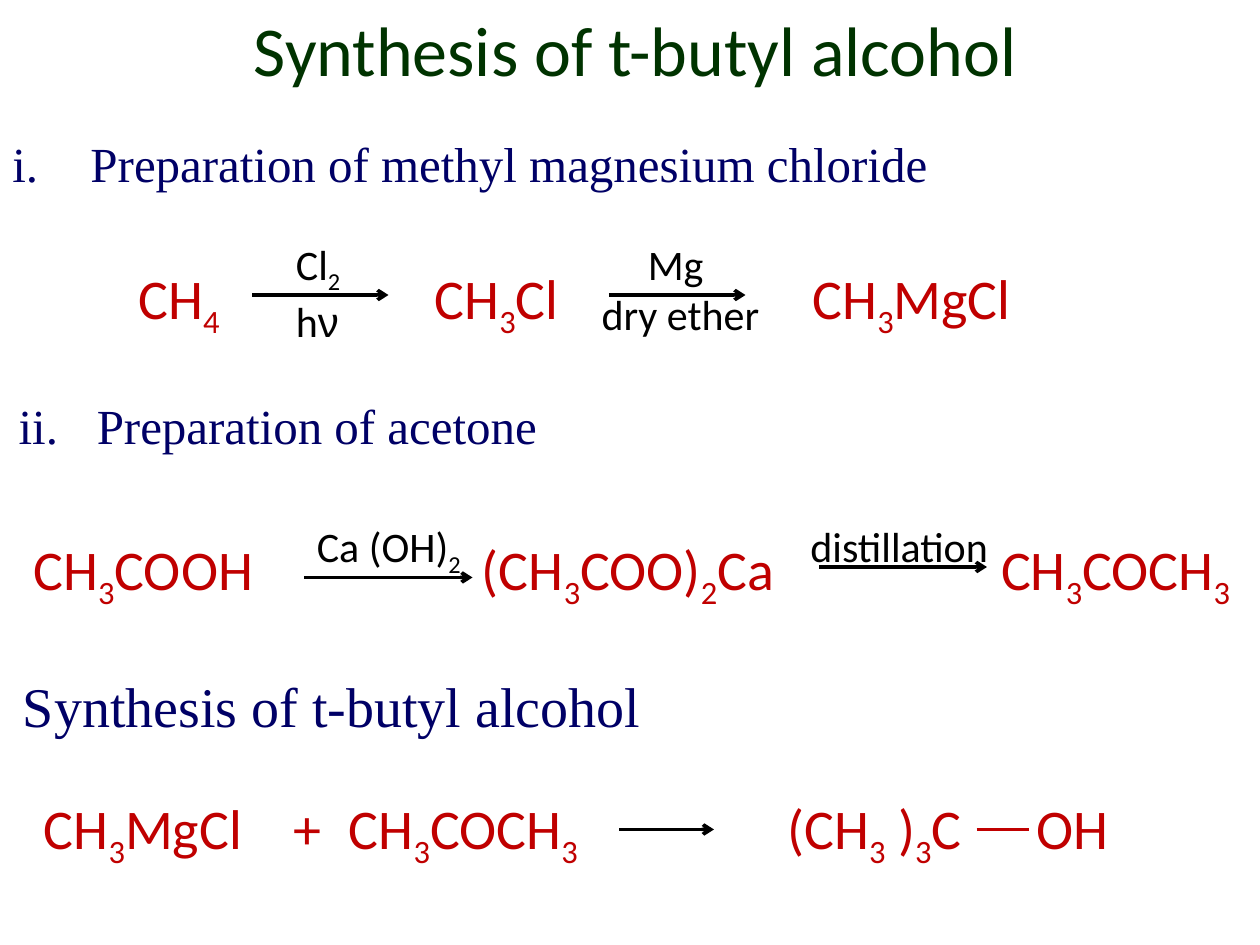
"""Builds a slide on the synthesis of t-butyl alcohol."""
from lxml import etree
from pptx import Presentation
from pptx import util as u
from pptx.dml.color import RGBColor
from pptx.enum import shapes, text
from pptx.oxml import ns

COLORS = {"title": "003300", "heading": "000066", "formula": "C00000", "reagent": "000000"}
SIZES = {"title": 40, "heading": 28, "formula": 32, "reagent": 24}
FONTS = {"title": "Calibri", "heading": "Times New Roman", "formula": "Calibri", "reagent": "Calibri"}
COLUMNS, ROWS = 120, 90


class ReactionSlide:
    """Holds the style, the slide and the group being filled."""

    def __init__(self, presentation):
        self.column = presentation.slide_width / COLUMNS
        self.row = presentation.slide_height / ROWS
        self.slide = presentation.slides.add_slide(presentation.slide_layouts[5])
        self.canvas = self.slide.shapes

    def start_group(self):
        """Sends the next elements to a new group."""
        self.canvas = self.slide.shapes.add_group_shape().shapes

    def end_group(self):
        """Sends the next elements to the slide itself."""
        self.canvas = self.slide.shapes

    def place(self, left, top, width, height):
        """Turns grid units into lengths."""
        return (round(left * self.column), round(top * self.row),
                round(width * self.column), round(height * self.row))

    def run(self, paragraph, words, style, size=None, font=None, subscript=False):
        """Adds one styled run."""
        run = paragraph.add_run()
        run.text = words
        run.font.size = u.Pt(size or SIZES[style])
        run.font.name = font or FONTS[style]
        run.font.color.rgb = RGBColor.from_string(COLORS[style])
        if subscript:
            run.font._element.set("baseline", "-25000")

    def chemistry(self, paragraph, words, style, size=None):
        """Adds runs, lowering each digit that follows an underscore."""
        first, *others = words.split("_")
        if first:
            self.run(paragraph, first, style, size)
        for part in others:
            self.run(paragraph, part[0], style, size, subscript=True)
            if part[1:]:
                self.run(paragraph, part[1:], style, size)

    def title(self, area, words):
        """Formats the title placeholder."""
        shape = self.slide.shapes.title
        shape.left, shape.top, shape.width, shape.height = self.place(*area)
        frame = shape.text_frame
        frame.word_wrap = True
        frame.auto_size = text.MSO_AUTO_SIZE.SHAPE_TO_FIT_TEXT
        frame.vertical_anchor = text.MSO_ANCHOR.TOP
        paragraph = frame.paragraphs[0]
        paragraph.alignment = text.PP_ALIGN.CENTER
        self.run(paragraph, words, "title")

    def text(self, area, lines, style, size=None, wrap=False, align=None):
        """Adds a text box and returns its last paragraph."""
        frame = self.canvas.add_textbox(*self.place(*area)).text_frame
        frame.word_wrap = wrap
        frame.auto_size = text.MSO_AUTO_SIZE.SHAPE_TO_FIT_TEXT
        for index, line in enumerate(lines):
            paragraph = frame.add_paragraph() if index else frame.paragraphs[0]
            paragraph.alignment = align
            self.chemistry(paragraph, line, style, size)
        return paragraph

    def step(self, area, words, number):
        """Adds a heading numbered in small roman numerals."""
        properties = self.text(area, [words], "heading")._p.get_or_add_pPr()
        properties.set("marL", str(u.Inches(0.62)))
        properties.set("indent", str(-u.Inches(0.62)))
        bullet = etree.SubElement(properties, ns.qn("a:buAutoNum"), type="romanLcPeriod")
        if number > 1:
            bullet.set("startAt", str(number))

    def equation(self, area, words, stops):
        """Adds a reaction line whose parts start at tab stops in inches."""
        paragraph = self.text(area, [words], "formula", wrap=True)
        tabs = etree.SubElement(paragraph._p.get_or_add_pPr(), ns.qn("a:tabLst"))
        for stop in stops:
            etree.SubElement(tabs, ns.qn("a:tab"), pos=str(u.Inches(stop)), algn="l")

    def line(self, start, end, row, style="reagent", arrow=True):
        """Adds a level line, with an arrowhead unless it is a bond."""
        left, top, width, _ = self.place(start, row, end - start, 0)
        connector = self.canvas.add_connector(
            shapes.MSO_CONNECTOR.STRAIGHT, left, top, left + width, top)
        connector.line.width = u.Pt(2)
        connector.line.color.rgb = RGBColor.from_string(COLORS[style])
        if arrow:
            etree.SubElement(connector.line._get_or_add_ln(), ns.qn("a:tailEnd"), type="arrow")
        etree.SubElement(connector._element.spPr, ns.qn("a:effectLst"))


def main():
    """Builds and saves the slide."""
    presentation = Presentation()
    presentation.slide_width, presentation.slide_height = u.Inches(10), u.Inches(7.5)
    page = ReactionSlide(presentation)
    page.title((1, 0, 119, 9.24), "Synthesis of t-butyl alcohol")
    page.step((0, 12.1, 90.5, 6.84), "Preparation of methyl magnesium chloride", 1)
    page.step((0.6, 37.1, 52.3, 6.84), "Preparation of acetone", 2)
    page.text((1, 63.4, 117, 7.7), ["Synthesis of t-butyl alcohol"], "heading", size=32, wrap=True)

    page.start_group()
    page.equation((12, 24.5, 96, 7.7), "CH_4\tCH_3Cl\tCH_3MgCl", [2.35, 5.35])
    for start in (24, 58):
        page.line(start, start + 13, 28.1)
    light = page.text((27, 22.1, 7.8, 10.9), ["Cl_2", "h"], "reagent")
    page.run(light, "ν", "reagent", font="Arial")
    page.text((56, 22.1, 17.6, 10.9), ["Mg ", "dry ether"], "reagent", align=text.PP_ALIGN.CENTER)

    page.start_group()
    page.equation((2, 50.3, 118, 7.7), "CH_3COOH\t(CH_3COO)_2Ca\tCH_3COCH_3", [3.56, 7.68])
    page.text((29, 49, 17.3, 6), ["Ca (OH)_2"], "reagent")
    page.text((76, 49, 19.6, 6), ["distillation"], "reagent")
    for start, row in ((78, 54), (29, 55)):
        page.line(start, start + 16, row)

    page.start_group()
    page.equation((3, 75, 112, 7.7), "CH_3MgCl\t+\tCH_3COCH_3\t(CH_3 )_3C\tOH",
                  [1.98, 2.42, 5.9, 7.88])
    page.line(59, 68, 79)
    page.line(93, 98, 79, "formula", arrow=False)
    page.end_group()
    presentation.save("out.pptx")


if __name__ == "__main__":
    main()
